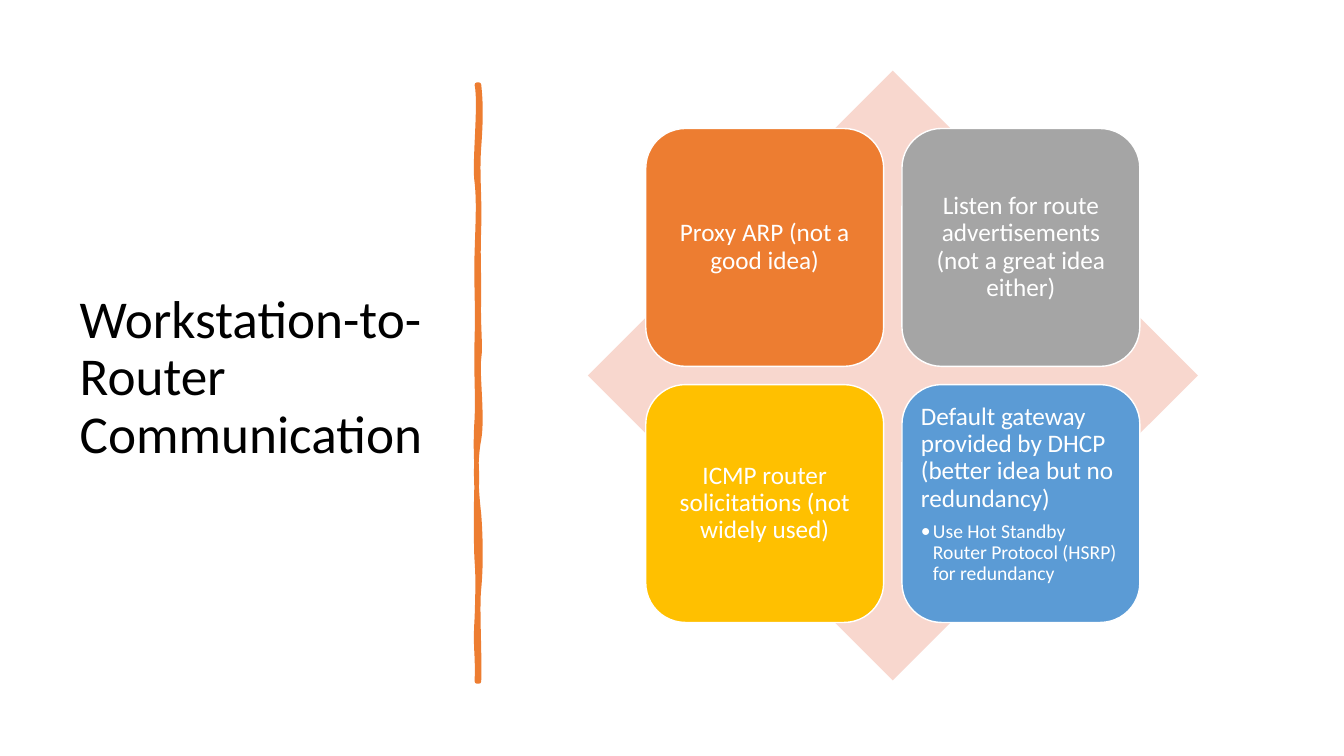
from dataclasses import dataclass
from lxml.etree import SubElement
from pptx import Presentation
from pptx.dml.color import RGBColor
from pptx.enum.shapes import MSO_SHAPE
from pptx.enum.text import MSO_ANCHOR, MSO_AUTO_SIZE, PP_ALIGN
from pptx.oxml.ns import qn
from pptx.util import Inches, Pt


@dataclass(frozen=True)
class Theme:
    font: str = "Calibri"
    ink: str = "000000"
    white: str = "FFFFFF"
    rose: str = "F8D7CE"
    orange: str = "ED7D31"
    gray: str = "A5A5A5"
    gold: str = "FFC000"
    blue: str = "5B9BD5"
    head: int = 38
    main: int = 18
    sub: int = 14
    lead: float = 0.9


THEME = Theme()
WIDE, HIGH = 13.33, 7.5

# Matrix: card grid as shares of the diamond's side
SIDE, LEFT, TOP = 6.05, 5.83, 0.7
EDGE, CARD, STEP = 0.095 * SIDE, 0.39 * SIDE, 0.42 * SIDE
INSET = 0.05 * CARD

CARDS = [
    (THEME.orange, "Proxy ARP (not a good idea)", None),
    (THEME.gray, "Listen for route advertisements (not a great idea either)", None),
    (THEME.gold, "ICMP router solicitations (not widely used)", None),
    (THEME.blue, "Default gateway provided by DHCP (better idea but no redundancy)",
     "Use Hot Standby Router Protocol (HSRP) for redundancy"),
]

# Hand-drawn rule: two handles and an end point for each curve
START = (4.75, 0.84)
CURVES = [
    (4.77, 1.02, 4.77, 1.19, 4.75, 1.46), (4.73, 1.73, 4.76, 1.95, 4.75, 2.26),
    (4.74, 2.57, 4.75, 2.62, 4.75, 2.94), (4.74, 3.25, 4.77, 3.42, 4.75, 3.56),
    (4.73, 3.7, 4.79, 4.14, 4.75, 4.36), (4.71, 4.57, 4.72, 4.84, 4.75, 5.1),
    (4.77, 5.36, 4.77, 5.64, 4.75, 5.84), (4.73, 6.03, 4.76, 6.5, 4.75, 6.76),
    (4.74, 6.76, 4.73, 6.76, 4.73, 6.76), (4.74, 6.46, 4.71, 6.44, 4.73, 6.13),
    (4.74, 5.83, 4.74, 5.7, 4.73, 5.57), (4.72, 5.44, 4.72, 4.95, 4.73, 4.77),
    (4.73, 4.59, 4.71, 4.45, 4.73, 4.15), (4.74, 3.86, 4.72, 3.73, 4.73, 3.35),
    (4.74, 2.98, 4.72, 2.81, 4.73, 2.5), (4.74, 2.18, 4.75, 2, 4.73, 1.81),
    (4.7, 1.63, 4.77, 1.04, 4.73, 0.84), (4.74, 0.84, 4.74, 0.84, 4.75, 0.84),
]


def paint(shape, fill, line=None, width=1):
    shape.shadow.inherit = False
    shape.fill.solid()
    shape.fill.fore_color.rgb = RGBColor.from_string(fill)
    if line:
        shape.line.color.rgb = RGBColor.from_string(line)
        shape.line.width = Pt(width)
    else:
        shape.line.fill.background()


def write(para, text, size, tint, align=PP_ALIGN.LEFT):
    para.alignment = align
    para.line_spacing = THEME.lead
    run = para.add_run()
    run.text = text
    run.font.name = THEME.font
    run.font.size = Pt(size)
    run.font.color.rgb = RGBColor.from_string(tint)


def bullet(para, indent):
    props = para._p.get_or_add_pPr()
    props.set("marL", str(Inches(indent)))
    props.set("indent", str(-Inches(indent)))
    SubElement(props, qn("a:buFont")).set("typeface", THEME.font)
    SubElement(props, qn("a:buChar")).set("char", "•")


def add_title(slide, text):
    title = slide.shapes.title
    title.left, title.top = Inches(0.69), Inches(0.7)
    title.width, title.height = Inches(3.74), Inches(6.11)
    frame = title.text_frame
    frame.word_wrap = True
    frame.auto_size = MSO_AUTO_SIZE.NONE
    frame.vertical_anchor = MSO_ANCHOR.MIDDLE
    write(frame.paragraphs[0], text, THEME.head, THEME.ink)


def bend(shape):
    # Turn each three straight steps into one curve
    lines = list(shape._element.iter(qn("a:lnTo")))
    for k in range(0, len(lines), 3):
        trio = lines[k:k + 3]
        route = trio[0].getparent()
        curve = SubElement(route, qn("a:cubicBezTo"))
        route.replace(trio[0], curve)
        for line in trio:
            curve.append(line[0])
        for line in trio[1:]:
            route.remove(line)


def add_rule(slide):
    pen = slide.shapes.build_freeform(*map(Inches, START))
    dots = [(Inches(c[k]), Inches(c[k + 1])) for c in CURVES for k in (0, 2, 4)]
    # The last curve ends at the start, so the outline is already shut
    pen.add_line_segments(dots, close=False)
    rule = pen.convert_to_shape()
    bend(rule)
    paint(rule, THEME.orange, THEME.orange, 3.25)


def add_text(group, x, y, size, text, note):
    box = group.shapes.add_textbox(*map(Inches, (x, y, size, size)))
    frame = box.text_frame
    frame.word_wrap = True
    frame.margin_left = frame.margin_right = Inches(0.07)
    frame.margin_top = frame.margin_bottom = Inches(0.07)
    frame.vertical_anchor = MSO_ANCHOR.TOP if note else MSO_ANCHOR.MIDDLE
    align = PP_ALIGN.LEFT if note else PP_ALIGN.CENTER
    write(frame.paragraphs[0], text, THEME.main, THEME.white, align)
    if note:
        frame.paragraphs[0].space_after = Pt(6.5)
        para = frame.add_paragraph()
        para.level = 1
        write(para, note, THEME.sub, THEME.white)
        bullet(para, 0.12)


def add_card(group, col, row, fill, text, note):
    x, y = LEFT + EDGE + col * STEP, TOP + EDGE + row * STEP
    card = group.shapes.add_shape(
        MSO_SHAPE.ROUNDED_RECTANGLE, *map(Inches, (x, y, CARD, CARD)))
    paint(card, fill, THEME.white)
    add_text(group, x + INSET, y + INSET, CARD - 2 * INSET, text, note)


def add_matrix(slide):
    group = slide.shapes.add_group_shape()
    back = group.shapes.add_shape(
        MSO_SHAPE.DIAMOND, *map(Inches, (LEFT, TOP, SIDE, SIDE)))
    paint(back, THEME.rose)
    for k, card in enumerate(CARDS):
        row, col = divmod(k, 2)
        add_card(group, col, row, *card)


def main():
    deck = Presentation()
    deck.slide_width, deck.slide_height = Inches(WIDE), Inches(HIGH)
    slide = deck.slides.add_slide(deck.slide_layouts[5])  # title only
    add_title(slide, "Workstation-to-Router Communication")
    add_rule(slide)
    add_matrix(slide)
    deck.save("out.pptx")


if __name__ == "__main__":
    main()
